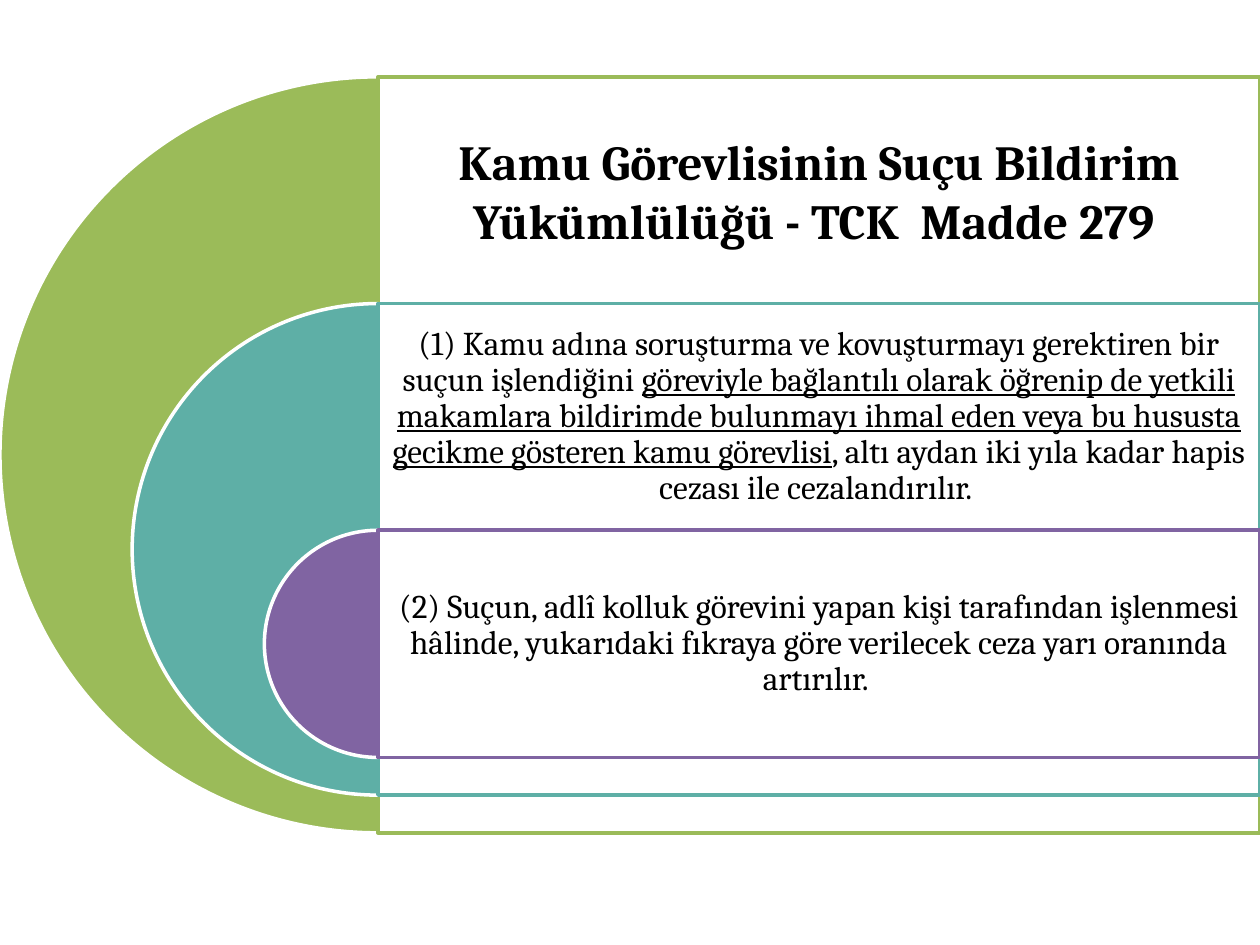
from lxml.etree import SubElement
from pptx import Presentation
from pptx.dml.color import RGBColor
from pptx.enum.shapes import MSO_SHAPE
from pptx.enum.text import MSO_ANCHOR, MSO_AUTO_SIZE, PP_ALIGN
from pptx.oxml.ns import qn
from pptx.util import Cm, Pt


def color(value):
    return RGBColor.from_string(value)


def add_panel(kind, left, top, width, height, fill, line):
    panel = page.shapes.add_shape(kind, Cm(left), Cm(top), Cm(width), Cm(height))
    panel.shadow.inherit = False
    panel.fill.solid()
    panel.fill.fore_color.rgb = color(fill)
    panel.line.color.rgb = color(line)
    panel.line.width = Pt(2)
    return panel


deck = Presentation()
deck.slide_width = Cm(25.4)
deck.slide_height = Cm(19.05)
page = deck.slides.add_slide(deck.slide_layouts[5])

middle, panel_width = 7.62, 17.78
first_top, band_height = 1.55, 4.57
largest = 15.24

bands = [
    ("9BBB59", 28, 0.3, 1.0, ["Kamu Görevlisinin Suçu Bildirim Yükümlülüğü - TCK  Madde 279 "]),
    ("5EAFA6", 19, 0.21, 0.9, [
        "(1) Kamu adına soruşturma ve kovuşturmayı gerektiren bir suçun işlendiğini ",
        "göreviyle bağlantılı olarak öğrenip de yetkili makamlara bildirimde bulunmayı "
        "ihmal eden veya bu hususta gecikme gösteren kamu görevlisi",
        ", altı aydan iki yıla kadar hapis cezası ile cezalandırılır. ",
    ]),
    ("8064A2", 19, 0.21, 0.9, [
        "(2) Suçun, adlî kolluk görevini yapan kişi tarafından işlenmesi hâlinde, "
        "yukarıdaki fıkraya göre verilecek ceza yarı oranında artırılır. ",
    ]),
]

for index, (accent, size, inset, spacing, texts) in enumerate(bands):
    top = first_top + index * band_height
    diameter = largest - index * 5.33

    pie = add_panel(MSO_SHAPE.PIE, middle - diameter / 2, top, diameter, diameter, accent, "FFFFFF")
    pie.adjustments[0] = 54
    pie.adjustments[1] = 162

    panel = add_panel(MSO_SHAPE.RECTANGLE, middle, top, panel_width, diameter, "FFFFFF", accent)
    white = panel.fill._xPr.find(qn("a:solidFill"))[0]
    SubElement(white, qn("a:alpha"), val="90000")

    if index == 0:
        box = page.shapes.title
        page.shapes._spTree.append(box._element)
    else:
        box = page.shapes.add_textbox(0, 0, 0, 0)
    box.left, box.top = Cm(middle), Cm(top)
    box.width, box.height = Cm(panel_width), Cm(band_height)

    frame = box.text_frame
    frame.word_wrap = True
    frame.auto_size = MSO_AUTO_SIZE.NONE
    frame.vertical_anchor = MSO_ANCHOR.MIDDLE
    frame.margin_left = frame.margin_right = Cm(inset)
    frame.margin_top = frame.margin_bottom = Cm(inset)

    para = frame.paragraphs[0]
    para.alignment = PP_ALIGN.CENTER
    para.line_spacing = spacing
    para.font.name = "Cambria"
    para.font.size = Pt(size)
    para.font.bold = index == 0
    para.font.color.rgb = color("000000")
    for position, text in enumerate(texts):
        span = para.add_run()
        span.text = text
        if position == 1:
            span.font.underline = True

deck.save("out.pptx")
